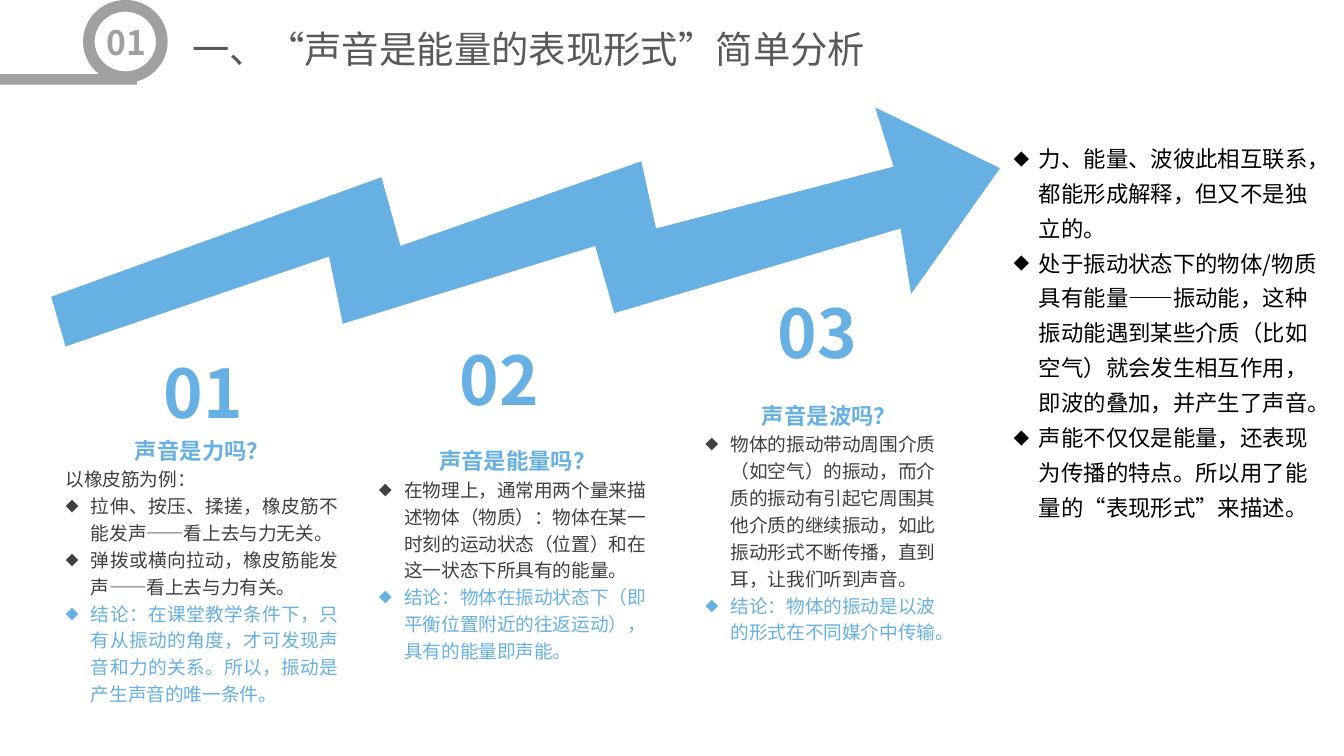
import lxml.etree
import pptx
import pptx.dml.color
import pptx.enum.shapes
import pptx.enum.text
import pptx.oxml.ns
import pptx.util

Cm = pptx.util.Cm
RGB = pptx.dml.color.RGBColor
ALIGN = pptx.enum.text.PP_ALIGN
ANCHOR = pptx.enum.text.MSO_ANCHOR
SIZE = pptx.enum.text.MSO_AUTO_SIZE
SHAPE = pptx.enum.shapes.MSO_SHAPE

BLUE = RGB(0x67, 0xB0, 0xE3)
GRAY = RGB(0xA0, 0xA0, 0xA0)
DARK = RGB(0x40, 0x40, 0x40)
TITLE = RGB(0x59, 0x59, 0x59)
BLACK = RGB(0, 0, 0)
FONT = "Noto Sans CJK SC"

ARROW = [
    (0.97, 5.61), (7.21, 3.35), (7.57, 4.65), (12.12, 3.05), (12.4, 4.32),
    (16.89, 3.15), (16.54, 2.03), (18.9, 3.18), (17.22, 5.56), (17.02, 4.32),
    (11.61, 5.92), (11.25, 4.65), (6.48, 6.12), (6.22, 4.85), (1.24, 6.55),
]

STEPS = [
    ("01", (2.59, 6.55, 2.51, 1.73), (0.99, 8.03, 5.66, 5.49), ALIGN.JUSTIFY,
     "声音是力吗？", "以橡皮筋为例：",
     ["拉伸、按压、揉搓，橡皮筋不能发声——看上去与力无关。",
      "弹拨或横向拉动，橡皮筋能发声——看上去与力有关。"],
     "结论：在课堂教学条件下，只有从振动的角度，才可发现声音和力的关系。所以，振动是产生声音的唯一条件。"),
    ("02", (8.18, 6.3, 2.51, 1.73), (6.91, 8.23, 5.74, 4.47), ALIGN.LEFT,
     "声音是能量吗？", None,
     ["在物理上，通常用两个量来描述物体（物质）：物体在某一时刻的运动状态（位置）和在这一状态下所具有的能量。"],
     "结论：物体在振动状态下（即平衡位置附近的往返运动），具有的能量即声能。"),
    ("03", (14.22, 5.41, 2.46, 1.73), (13.08, 7.37, 5.18, 5.49), ALIGN.LEFT,
     "声音是波吗？", None,
     ["物体的振动带动周围介质（如空气）的振动，而介质的振动有引起它周围其他介质的继续振动，如此振动形式不断传播，直到耳，让我们听到声音。"],
     "结论：物体的振动是以波的形式在不同媒介中传输。"),
]

NOTES = [
    "力、能量、波彼此相互联系，都能形成解释，但又不是独立的。",
    "处于振动状态下的物体/物质具有能量——振动能，这种振动能遇到某些介质（比如空气）就会发生相互作用，即波的叠加，并产生了声音。",
    "声能不仅仅是能量，还表现为传播的特点。所以用了能量的“表现形式”来描述。",
]


def add_tag(node, name, **attrs):
    lxml.etree.SubElement(node, pptx.oxml.ns.qn(name), **attrs)


def write(frame, text, size=10, color=DARK, bold=False, align=ALIGN.LEFT,
          line=1.2, mark=False):
    para = frame.paragraphs[0]
    if para.runs:
        para = frame.add_paragraph()
    if mark:
        props = para._p.get_or_add_pPr()
        props.set("marL", str(Cm(0.48)))
        props.set("indent", str(-Cm(0.48)))
        add_tag(props, "a:buSzPct", val="70000")
        add_tag(props, "a:buFont", typeface=FONT)
        add_tag(props, "a:buChar", char="◆")
    para.alignment = align
    para.line_spacing = line
    para.space_before = pptx.util.Pt(0)
    run = para.add_run()
    run.text = text
    run.font.size = pptx.util.Pt(size)
    run.font.bold = bold
    run.font.color.rgb = color
    run.font.name = FONT
    props = run._r.get_or_add_rPr()
    props.set("lang", "zh-CN")
    add_tag(props, "a:ea", typeface=FONT)


def set_frame(shape):
    frame = shape.text_frame
    frame.word_wrap = True
    frame.auto_size = SIZE.SHAPE_TO_FIT_TEXT
    frame.vertical_anchor = ANCHOR.TOP
    return frame


def add_text(shapes, box):
    return set_frame(shapes.add_textbox(*map(Cm, box)))


def move(holder, box):
    holder.left, holder.top, holder.width, holder.height = map(Cm, box)
    return set_frame(holder)


def paint(shape, color=None):
    shape.shadow.inherit = False
    shape.line.fill.background()
    if color is None:
        shape.fill.background()
    else:
        shape.fill.solid()
        shape.fill.fore_color.rgb = color
    return shape


def add_shape(shapes, kind, box, color=None):
    return paint(shapes.add_shape(kind, *map(Cm, box)), color)


def add_arrow(shapes):
    first, *rest = [(Cm(x), Cm(y)) for x, y in ARROW]
    path = shapes.build_freeform(*first)
    path.add_line_segments(rest, close=True)
    paint(path.convert_to_shape(), BLUE)


def add_step(shapes, label, top, box, align, head, intro, points, result):
    group = shapes.add_group_shape().shapes
    frame = add_text(group, box)
    write(frame, head, size=12, color=BLUE, bold=True, align=ALIGN.CENTER)
    if intro:
        write(frame, intro, align=align)
    for point in points:
        write(frame, point, align=align, mark=True)
    write(frame, result, color=BLUE, align=align, mark=True)
    frame = add_text(group, top)
    frame.margin_left = frame.margin_right = Cm(0.18)
    frame.margin_top = frame.margin_bottom = Cm(0.1)
    write(frame, label, size=36, color=BLUE, bold=True, align=ALIGN.CENTER, line=1.0)


def add_badge(shapes):
    oval = add_shape(shapes, SHAPE.OVAL, (1.4, 0.2, 1.98, 1.19))
    oval.text_frame.vertical_anchor = ANCHOR.MIDDLE
    write(oval.text_frame, "01", size=18, color=GRAY, bold=True,
          align=ALIGN.CENTER, line=1.0)
    add_shape(shapes, SHAPE.RECTANGLE, (0, 1.4, 2.59, 0.2), GRAY)
    ring = add_shape(shapes, SHAPE.DONUT, (1.57, 0, 1.6, 1.57), GRAY)
    ring.adjustments[0] = 0.14


def main():
    deck = pptx.Presentation()
    deck.slide_width, deck.slide_height = Cm(25.4), Cm(14.29)
    slide = deck.slides.add_slide(deck.slide_layouts[1])
    shapes = slide.shapes
    frame = move(shapes.title, (3.38, 0.2, 14.17, 1.27))
    write(frame, "一、“声音是能量的表现形式”简单分析", size=20, color=TITLE)
    frame = move(slide.placeholders[1], (18.9, 2.46, 6.4, 7.57))
    for note in NOTES:
        write(frame, note, size=12, color=BLACK, line=1.3, mark=True)
    add_arrow(shapes)
    for step in STEPS:
        add_step(shapes, *step)
    add_badge(shapes)
    deck.save("out.pptx")


if __name__ == "__main__":
    main()
